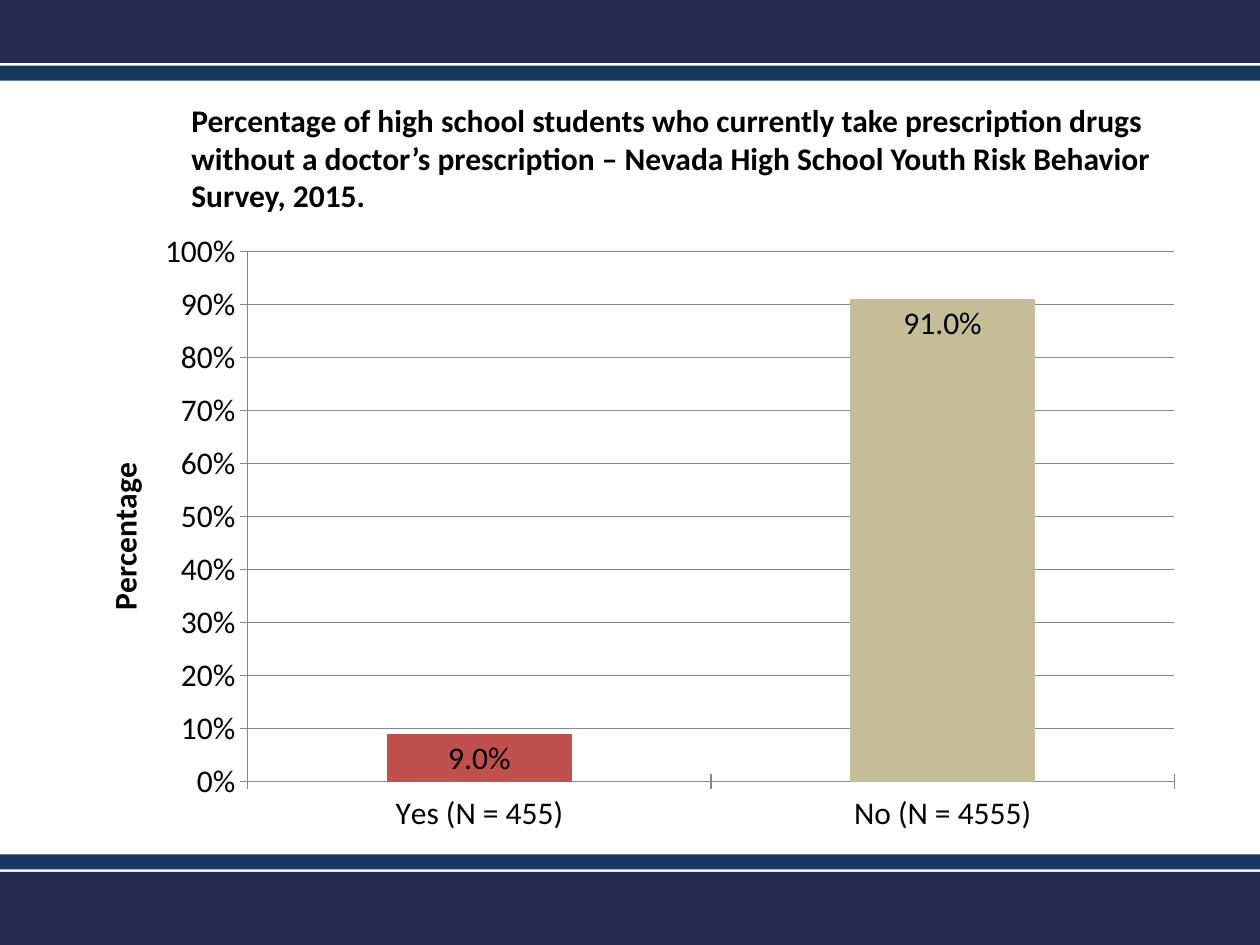
from lxml import etree
from pptx import Presentation
from pptx.chart.data import CategoryChartData
from pptx.dml.color import RGBColor
from pptx.enum.chart import XL_CHART_TYPE, XL_LABEL_POSITION, XL_TICK_MARK
from pptx.enum.shapes import MSO_SHAPE
from pptx.enum.text import MSO_AUTO_SIZE
from pptx.oxml.ns import qn
from pptx.util import Inches, Pt

COLUMNS = XL_CHART_TYPE.COLUMN_CLUSTERED
INSIDE_END = XL_LABEL_POSITION.INSIDE_END
CROSS = XL_TICK_MARK.CROSS
RECTANGLE = MSO_SHAPE.RECTANGLE
GROW = MSO_AUTO_SIZE.SHAPE_TO_FIT_TEXT

WIDTH, HEIGHT = 10, 7.5
NAVY, BLUE, BLACK, GREY = "28294E", "17375E", "000000", "868686"
RED, TAN = "C0504D", "C4BD97"
BANDS = [
    ((0, 0, WIDTH, 0.5), NAVY),
    ((0, 0.52, WIDTH, 0.12), BLUE),
    ((0, 6.92, WIDTH, 0.58), NAVY),
    ((0, 6.78, WIDTH, 0.12), BLUE),
]
HEADING = (
    "Percentage of high school students who currently take prescription drugs "
    "without a doctor’s prescription – Nevada High School Youth Risk Behavior "
    "Survey, 2015."
)
ANSWERS = {"Yes (N = 455)": (0.09, RED), "No (N = 4555)": (0.91, TAN)}
PLOT_SHARES = {"layoutTarget": "inner", "xMode": "edge", "yMode": "edge",
               "x": 0.163, "y": 0.05, "w": 0.817, "h": 0.85}
AXIS_TITLE_SHARES = {"xMode": "edge", "yMode": "edge", "x": 0.03, "y": 0.38}


def color(hex_string):
    return RGBColor.from_string(hex_string)


def inches(box):
    return [Inches(length) for length in box]


def set_format(target, values):
    for name, value in values.items():
        setattr(target, name, value)


def set_font(font, bold=False):
    set_format(font, {"name": "Calibri", "size": Pt(18), "bold": bold})
    font.color.rgb = color(BLACK)


def place_by_shares(parent, after, shares):
    """Fix a chart part's position as shares of the chart's size."""
    for old in parent.findall(qn("c:layout")):
        parent.remove(old)
    layout = etree.Element(qn("c:layout"))
    manual = etree.SubElement(layout, qn("c:manualLayout"))
    for tag, value in shares.items():
        etree.SubElement(manual, qn(f"c:{tag}")).set("val", str(value))
    if after is None:
        parent.insert(0, layout)
    else:
        after.addnext(layout)


def add_band(slide, box, fill):
    band = slide.shapes.add_shape(RECTANGLE, *inches(box))
    band.shadow.inherit = False
    band.fill.solid()
    band.fill.fore_color.rgb = color(fill)
    band.line.fill.background()


def add_heading(slide, box):
    frame = slide.shapes.add_textbox(*inches(box)).text_frame
    set_format(frame, {"word_wrap": True, "auto_size": GROW, "text": HEADING})
    set_font(frame.paragraphs[0].runs[0].font, bold=True)


def format_axes(chart):
    percent, answer = chart.value_axis, chart.category_axis
    set_format(percent, {"minimum_scale": 0, "maximum_scale": 1, "major_unit": 0.1,
                         "has_major_gridlines": True})
    set_format(percent.tick_labels, {"number_format": "0%",
                                     "number_format_is_linked": False})
    for axis in (percent, answer):
        axis.major_tick_mark = CROSS
        set_font(axis.tick_labels.font)
    for line in (percent.format.line, answer.format.line,
                 percent.major_gridlines.format.line):
        line.color.rgb = color(GREY)
        line.width = Pt(0.75)

    title = percent.axis_title
    title.text_frame.text = "Percentage"
    set_font(title.text_frame.paragraphs[0].runs[0].font, bold=True)
    title_xml = title.text_frame._txBody.getparent().getparent()
    place_by_shares(title_xml, title_xml.find(qn("c:tx")), AXIS_TITLE_SHARES)


def format_columns(plot):
    set_format(plot, {"gap_width": 150, "vary_by_categories": False})
    series = plot.series[0]
    series.format.fill.solid()
    series.format.fill.fore_color.rgb = color("4F81BD")
    for index, (_, fill) in enumerate(ANSWERS.values()):
        column = series.points[index].format.fill
        column.solid()
        column.fore_color.rgb = color(fill)
    labels = series.data_labels
    set_format(labels, {"show_value": True, "position": INSIDE_END,
                        "number_format": "0.0%", "number_format_is_linked": False})
    set_font(labels.font)


def add_answer_chart(slide, box):
    data = CategoryChartData()
    data.categories = list(ANSWERS)
    data.add_series("Series 1", [share for share, _ in ANSWERS.values()])
    chart = slide.shapes.add_chart(COLUMNS, *inches(box), data).chart
    set_format(chart, {"has_legend": False, "has_title": False})
    set_font(chart.font)
    format_axes(chart)
    format_columns(chart.plots[0])
    place_by_shares(chart._chartSpace.chart.plotArea, None, PLOT_SHARES)


def main():
    deck = Presentation()
    set_format(deck, {"slide_width": Inches(WIDTH), "slide_height": Inches(HEIGHT)})
    slide = deck.slides.add_slide(deck.slide_layouts[6])
    for box, fill in BANDS:
        add_band(slide, box, fill)
    add_answer_chart(slide, (0.5, 1.75, 9, 4.95))
    add_heading(slide, (1.42, 0.75, 8.58, 1.01))
    deck.save("out.pptx")


if __name__ == "__main__":
    main()
